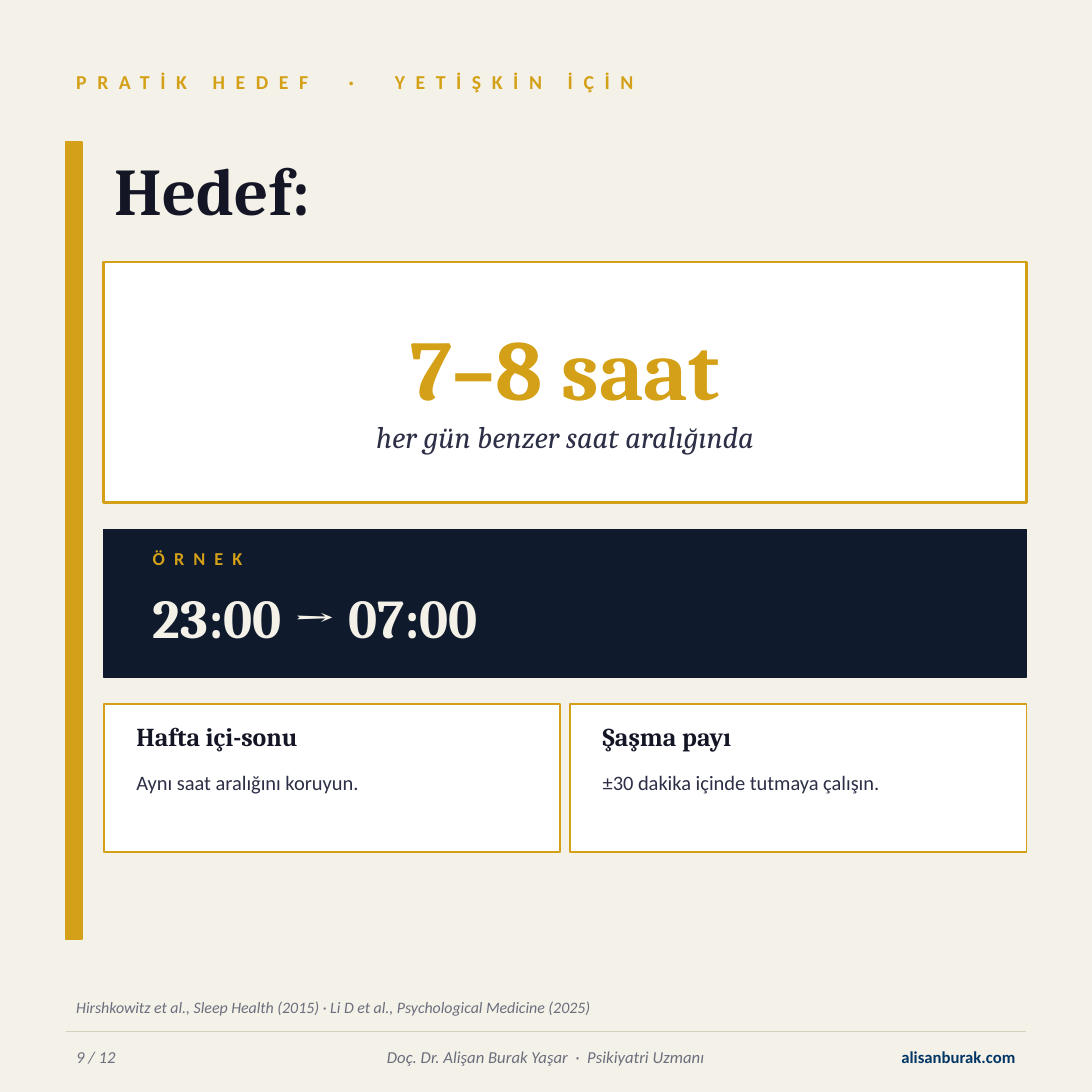
from pptx import Presentation
from pptx.dml.color import RGBColor
from pptx.enum.shapes import MSO_CONNECTOR, MSO_SHAPE
from pptx.enum.text import MSO_ANCHOR, MSO_AUTO_SIZE, PP_ALIGN
from pptx.oxml.ns import qn
from pptx.util import Inches, Pt
from lxml import etree

RECT = MSO_SHAPE.RECTANGLE
STRAIGHT = MSO_CONNECTOR.STRAIGHT
TOP, MIDDLE = MSO_ANCHOR.TOP, MSO_ANCHOR.MIDDLE
LEFT, CENTER, RIGHT = PP_ALIGN.LEFT, PP_ALIGN.CENTER, PP_ALIGN.RIGHT
NO_FIT = MSO_AUTO_SIZE.NONE
SANS, SERIF = "Calibri", "Cambria"

COLORS = {
    "paper": "F4F1E8", "gold": "D4A017", "ink": "141626", "body": "2C2F45",
    "white": "FFFFFF", "navy": "0F1B2D", "gray": "6B6E7D", "rule": "D6D0BF",
    "link": "003566",
}

# Style: font, size, colour, bold, italic, letter spacing in points
STYLES = {
    "kicker": (SANS, 13, "gold", True, False, 7),
    "title": (SERIF, 44, "ink", True, False, 0),
    "goal": (SERIF, 56, "gold", True, False, 0),
    "hint": (SERIF, 20, "body", False, True, 0),
    "label": (SANS, 12, "gold", True, False, 6),
    "hours": (SERIF, 36, "paper", True, False, 0),
    "head": (SERIF, 17, "ink", True, False, 0),
    "text": (SANS, 13.5, "body", False, False, 0),
    "source": (SANS, 10.5, "gray", False, True, 0),
    "foot": (SANS, 11, "gray", False, True, 0),
    "site": (SANS, 11, "link", True, False, 0),
}

KICKER = "PRATİK HEDEF  ·  YETİŞKİN İÇİN"
TITLE = "Hedef:"
GOAL = [("7–8 saat", "goal"), ("her gün benzer saat aralığında", "hint")]
LABEL, HOURS = "ÖRNEK", "23:00 → 07:00"
CARDS = [
    ("Hafta içi-sonu", "Aynı saat aralığını koruyun."),
    ("Şaşma payı", "±30 dakika içinde tutmaya çalışın."),
]
SOURCE = "Hirshkowitz et al., Sleep Health (2015) · Li D et al., Psychological Medicine (2025)"
FOOTER = [  # text, style, left, width, alignment
    ("9 / 12", "foot", 0.6, 1.5, LEFT),
    ("Doç. Dr. Alişan Burak Yaşar  ·  Psikiyatri Uzmanı", "foot", 2.2, 5.6, CENTER),
    ("alisanburak.com", "site", 7.9, 1.5, RIGHT),
]

EDGE, END = 0.6, 9.4
PANEL = 0.95
WIDE = END - PANEL
CARD_W, CARD_H, CARD_Y, GAP = 4.18, 1.35, 6.45, 0.09


def color(name):
    return RGBColor.from_string(COLORS[name])


def write(shape, lines, anchor=TOP, align=LEFT):
    """Fill a shape with (text, style) paragraphs."""
    frame = shape.text_frame
    frame.word_wrap = True
    frame.auto_size = NO_FIT
    frame.vertical_anchor = anchor
    for i, (text, style) in enumerate(lines):
        para = frame.add_paragraph() if i else frame.paragraphs[0]
        para.alignment = align
        run = para.add_run()
        run.text = text
        face, size, tint, bold, slant, space = STYLES[style]
        font = run.font
        font.name, font.size = face, Pt(size)
        font.bold, font.italic = bold, slant
        font.color.rgb = color(tint)
        if space:
            run._r.get_or_add_rPr().set("spc", str(space * 100))


def add_text(slide, place, lines, anchor=TOP, align=LEFT):
    box = slide.shapes.add_textbox(*map(Inches, place))
    write(box, lines, anchor, align)


def add_rect(slide, place, fill, line, weight):
    rect = slide.shapes.add_shape(RECT, *map(Inches, place))
    rect.shadow.inherit = False
    rect.fill.solid()
    rect.fill.fore_color.rgb = color(fill)
    rect.line.color.rgb = color(line)
    rect.line.width = Pt(weight)


def add_rule(slide, y):
    rule = slide.shapes.add_connector(
        STRAIGHT, Inches(EDGE), Inches(y), Inches(END), Inches(y))
    rule.line.color.rgb = color("rule")
    rule.line.width = Pt(0.75)
    etree.SubElement(rule._element.spPr, qn("a:effectLst"))


def main():
    deck = Presentation()
    deck.slide_width = deck.slide_height = Inches(10)
    slide = deck.slides.add_slide(deck.slide_layouts[5])
    slide.background.fill.solid()
    slide.background.fill.fore_color.rgb = color("paper")

    add_text(slide, (EDGE, 0.55, END - EDGE, 0.4), [(KICKER, "kicker")], MIDDLE)
    add_rect(slide, (EDGE, 1.3, 0.15, 7.3), "gold", "gold", 1)
    title = slide.shapes.title
    title.left, title.top = Inches(PANEL), Inches(1.3)
    title.width, title.height = Inches(8.5), Inches(0.85)
    write(title, [(TITLE, "title")], MIDDLE)

    add_rect(slide, (PANEL, 2.4, WIDE, 2.2), "white", "gold", 1.8)
    add_text(slide, (1, 2.55, 8.35, 1.95), GOAL, MIDDLE, CENTER)

    add_rect(slide, (PANEL, 4.85, WIDE, 1.35), "navy", "navy", 1)
    add_text(slide, (1.3, 4.95, 7.95, 0.32), [(LABEL, "label")], MIDDLE)
    add_text(slide, (1.3, 5.3, 7.95, 0.85), [(HOURS, "hours")])

    for i, (head, text) in enumerate(CARDS):
        x = PANEL + i * (CARD_W + GAP)
        add_rect(slide, (x, CARD_Y, CARD_W, CARD_H), "white", "gold", 1.2)
        add_text(slide, (x + 0.2, CARD_Y + 0.1, 3.85, 0.45), [(head, "head")])
        add_text(slide, (x + 0.2, CARD_Y + 0.55, 3.85, 0.7), [(text, "text")])

    add_text(slide, (EDGE, 9.05, END - EDGE, 0.35), [(SOURCE, "source")], MIDDLE)
    add_rule(slide, 9.45)
    for text, style, x, width, align in FOOTER:
        add_text(slide, (x, 9.5, width, 0.35), [(text, style)], MIDDLE, align)

    deck.save("out.pptx")


if __name__ == "__main__":
    main()
